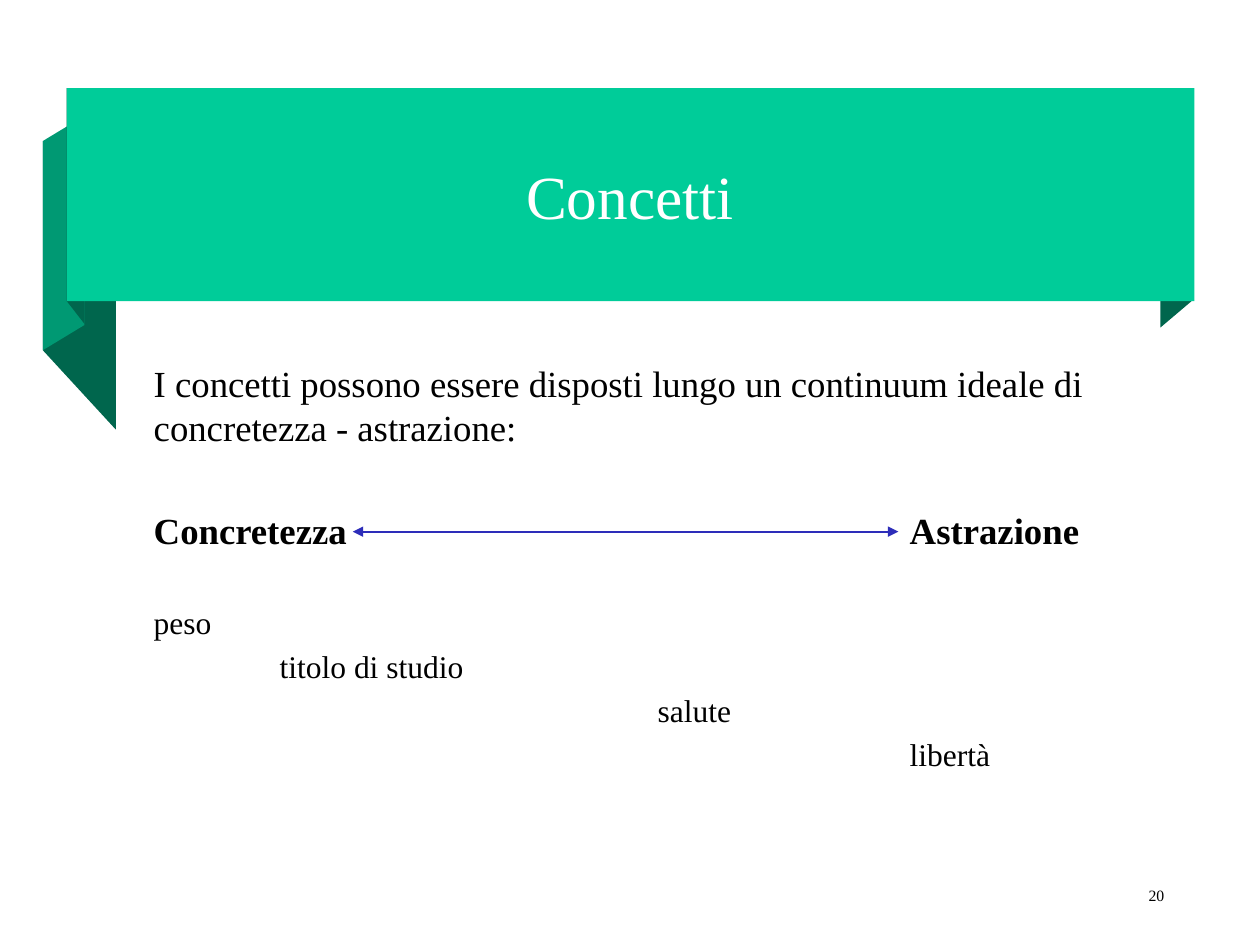
import pptx
import pptx.dml.color
import pptx.enum.shapes
import pptx.enum.text
import pptx.oxml.ns
import pptx.util
from lxml import etree

qn = pptx.oxml.ns.qn
ALIGN = pptx.enum.text.PP_ALIGN
ANCHOR = pptx.enum.text.MSO_ANCHOR
GREEN, MID_GREEN, DARK_GREEN = "00CC99", "009973", "00664D"
BLACK, WHITE, BLUE = "000000", "FFFFFF", "2D2DB9"


def color(hex_value):
    return pptx.dml.color.RGBColor.from_string(hex_value)


def format_text(paragraph, size, hex_value, bold=False):
    values = {"name": "Times New Roman", "size": pptx.util.Pt(size), "bold": bold}
    for name, value in values.items():
        setattr(paragraph.font, name, value)
    paragraph.font.color.rgb = color(hex_value)


presentation = pptx.Presentation()
presentation.slide_width = pptx.util.Inches(10)
presentation.slide_height = pptx.util.Inches(7.5)
unit = presentation.slide_width // 10  # square grid: 10 columns by 7.5 rows
slide = presentation.slides.add_slide(presentation.slide_layouts[1])
shapes = slide.shapes
title, body = shapes.title, slide.placeholders[1]

# Folded ribbon behind the title band, in hundredths of a grid unit
folds = [
    (DARK_GREEN, [(92, 341), (34, 278), (34, 112), (92, 175)]),
    (MID_GREEN, [(67, 258), (34, 278), (34, 112), (67, 92)]),
    (DARK_GREEN, [(67, 257), (53, 239), (53, 70), (67, 89)]),
    (DARK_GREEN, [(947, 238), (921, 260), (921, 91), (947, 70)]),
]
ribbon = []
for fill, points in folds:
    builder = shapes.build_freeform(*points[0], scale=unit / 100)
    builder.add_line_segments(points[1:], close=True)
    ribbon.append((builder.convert_to_shape(), fill))
band = shapes.add_shape(
    pptx.enum.shapes.MSO_SHAPE.RECTANGLE,
    *(round(n * unit) for n in (0.53, 0.7, 8.95, 1.69)))
ribbon.append((band, GREEN))
for shape, fill in ribbon:
    shape.shadow.inherit = False
    shape.fill.solid()
    shape.fill.fore_color.rgb = color(fill)
    shape.line.fill.background()

# Text frames, in front of the ribbon
number = shapes.add_textbox(0, 0, unit, unit)
frames = [
    (title, (0.79, 0.88, 8.42, 1.33), ANCHOR.MIDDLE),
    (body, (1.12, 2.72, 7.96, 3.9), ANCHOR.TOP),
    (number, (8.78, 6.98, 0.56, 0.35), ANCHOR.TOP),
]
for shape, place, anchor in frames:
    shapes._spTree.append(shape._element)
    for name, value in zip(("left", "top", "width", "height"), place):
        setattr(shape, name, round(value * unit))
    shape.text_frame.word_wrap = True
    shape.text_frame.auto_size = pptx.enum.text.MSO_AUTO_SIZE.NONE
    shape.text_frame.vertical_anchor = anchor

for shape, text, size, hex_value, alignment in [
    (title, "Concetti", 35, WHITE, ALIGN.CENTER),
    (number, "20", 9, BLACK, ALIGN.RIGHT),
]:
    paragraph = shape.text_frame.paragraphs[0]
    paragraph.text = text
    paragraph.alignment = alignment
    format_text(paragraph, size, hex_value)

# Body lines: text, size, bold, space before, tab column
lines = [
    ("I concetti possono essere disposti lungo un continuum ideale di "
     "concretezza - astrazione:", 21, False, 0, 1),
    ("Concretezza\tAstrazione", 21, True, 34, 6),
    ("peso", 18, False, 29, 1),
    ("\ttitolo di studio", 18, False, 3.6, 1),
    ("\tsalute", 18, False, 3.6, 4),
    ("\tlibertà", 18, False, 3.6, 6),
]
frame = body.text_frame
frame.margin_top = round(0.14 * unit)
for index, (text, size, bold, space, column) in enumerate(lines):
    paragraph = frame.add_paragraph() if index else frame.paragraphs[0]
    paragraph.text = text
    properties = paragraph._p.get_or_add_pPr()
    for name, value in {"marL": 0, "indent": 0, "defTabSz": column * unit}.items():
        properties.set(name, str(value))
    etree.SubElement(properties, qn("a:buNone"))
    paragraph.line_spacing = 1.0
    paragraph.space_before = pptx.util.Pt(space)
    format_text(paragraph, size, BLACK, bold)

# Continuum from concrete to abstract
arrow_row = round(4.22 * unit)
arrow = shapes.add_connector(
    pptx.enum.shapes.MSO_CONNECTOR.STRAIGHT,
    round(2.8 * unit), arrow_row, round(7.13 * unit), arrow_row)
arrow.line.color.rgb = color(BLUE)
arrow.line.width = pptx.util.Pt(1)
for end in ("a:headEnd", "a:tailEnd"):
    etree.SubElement(arrow.line._get_or_add_ln(), qn(end), type="triangle")
etree.SubElement(arrow._element.spPr, qn("a:effectLst"))

presentation.save("out.pptx")
